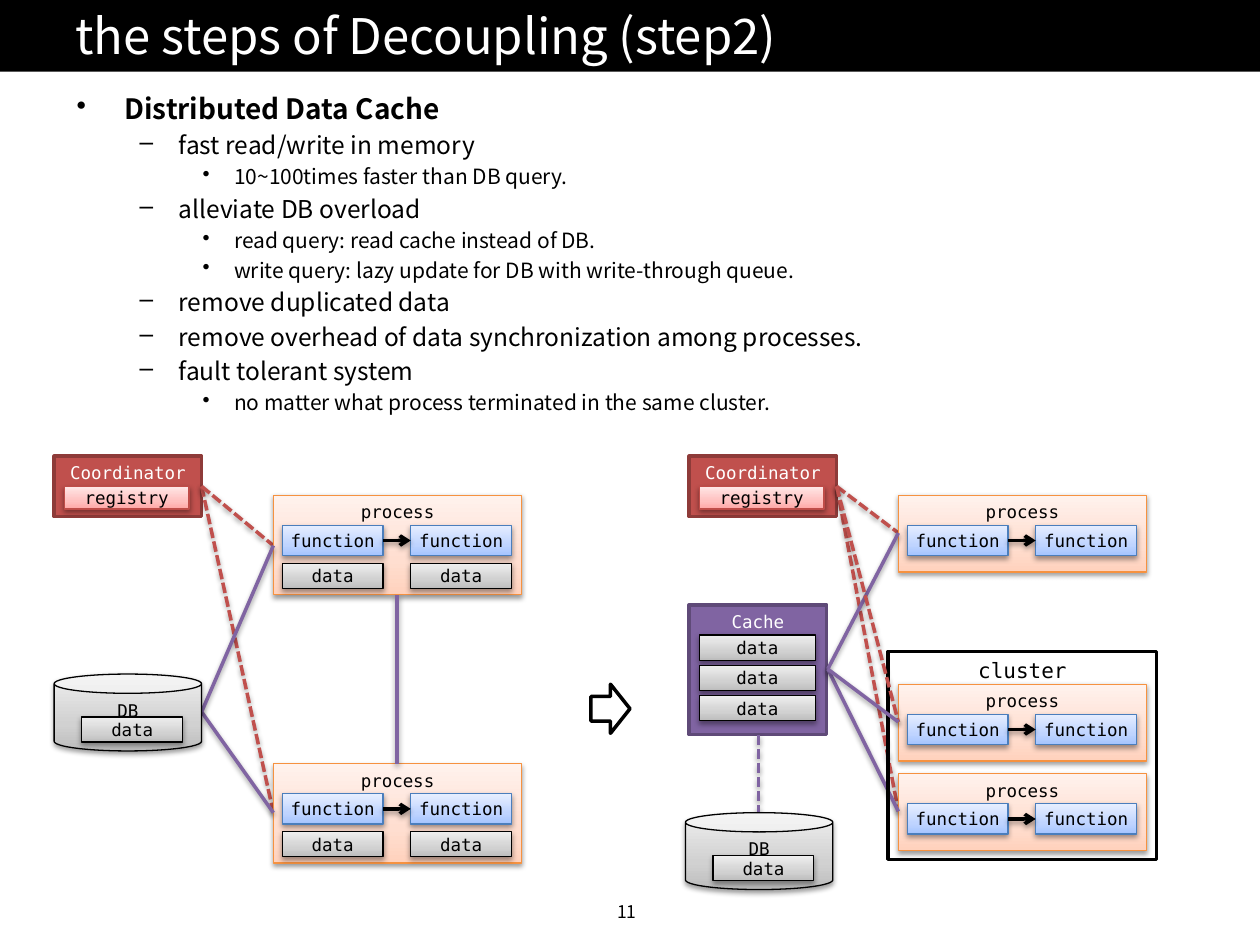
import pptx
import pptx.util
import pptx.dml.color
import pptx.enum.dml
import pptx.enum.shapes
import pptx.enum.text
import pptx.oxml.ns
import lxml.etree
import copy

Inches, Pt = pptx.util.Inches, pptx.util.Pt
SHAPE = pptx.enum.shapes.MSO_SHAPE
ANCHOR = pptx.enum.text.MSO_ANCHOR
ALIGN = pptx.enum.text.PP_ALIGN
qn = pptx.oxml.ns.qn

COLORS = {
    "black": "000000", "white": "FFFFFF",
    "red": "C0504D", "red_edge": "8E3B39", "pink_edge": "BF4C48",
    "purple": "8064A2", "purple_edge": "5F4A78",
    "orange_edge": "F69240", "blue_edge": "4B7EBC",
}
GRADIENTS = {
    "pink": ("FFA6A5", "FFC0BF", "FFE7E7"),
    "orange": ("FFD2BD", "FFDED0", "FFF2ED"),
    "blue": ("A4C4FF", "BFD4FF", "E6EEFF"),
    "gray": ("BDBDBD", "D1D1D1", "EEEEEE"),
}
STOPS = (0, 0.35, 1)


def rgb(name):
    return pptx.dml.color.RGBColor.from_string(COLORS[name])


class Deck:
    sans = "Noto Sans CJK KR"
    mono = "DejaVu Sans Mono"

    def __init__(self, prs):
        self.slide = prs.slides.add_slide(prs.slide_layouts[6])
        self.shapes = self.slide.shapes

    def begin_group(self):
        self.shapes = self.slide.shapes.add_group_shape().shapes

    def end_group(self):
        self.shapes = self.slide.shapes

    def run(self, p, text, size, font, color="black", bold=False):
        r = p.add_run()
        r.text = text
        r.font.size, r.font.name, r.font.bold = Pt(size), font, bold
        r.font.color.rgb = rgb(color)

    def shadow(self, effects):
        shdw = lxml.etree.SubElement(
            effects, qn("a:outerShdw"), blurRad=str(Pt(3.1)), dist=str(Pt(1.6)),
            dir="5400000", rotWithShape="0")
        clr = lxml.etree.SubElement(shdw, qn("a:srgbClr"), val=COLORS["black"])
        lxml.etree.SubElement(clr, qn("a:alpha"), val="38000")

    def gradient(self, fill, spPr, name):
        fill.gradient()
        fill.gradient_angle = 90
        stops = spPr.find(".//" + qn("a:gsLst"))
        stops.append(copy.deepcopy(stops[-1]))
        for stop, pos, color in zip(fill.gradient_stops, STOPS, GRADIENTS[name]):
            stop.position = pos
            stop.color.rgb = pptx.dml.color.RGBColor.from_string(color)

    def box(self, x, y, w, h, text="", fill=None, edge=None, kind=SHAPE.RECTANGLE,
            color="black", size=10, middle=False):
        sp = self.shapes.add_shape(kind, Inches(x), Inches(y), Inches(w), Inches(h))
        sp.shadow.inherit = False
        spPr = sp._element.spPr
        if fill in GRADIENTS:
            self.gradient(sp.fill, spPr, fill)
            self.shadow(spPr.find(qn("a:effectLst")))
        elif fill:
            sp.fill.solid()
            sp.fill.fore_color.rgb = rgb(fill)
        else:
            sp.fill.background()
        if edge:
            sp.line.color.rgb = rgb(edge)
            sp.line.width = Pt(0.75 if fill in GRADIENTS else 2)
        else:
            sp.line.fill.background()
        if text:
            tf = sp.text_frame
            tf.word_wrap = False
            tf.vertical_anchor = ANCHOR.MIDDLE if middle else ANCHOR.TOP
            p = tf.paragraphs[0]
            p.alignment = ALIGN.CENTER
            self.run(p, text, size, self.mono, color)

    def line(self, start, end, color, dashed=False, arrow=False):
        ends = [Inches(v) for v in (*start, *end)]
        cx = self.shapes.add_connector(pptx.enum.shapes.MSO_CONNECTOR.STRAIGHT, *ends)
        cx.line.color.rgb = rgb(color)
        cx.line.width = Pt(2)
        if dashed:
            cx.line.dash_style = pptx.enum.dml.MSO_LINE.SQUARE_DOT
        spPr = cx._element.spPr
        if arrow:
            lxml.etree.SubElement(spPr.find(qn("a:ln")), qn("a:tailEnd"), type="arrow")
        self.shadow(lxml.etree.SubElement(spPr, qn("a:effectLst")))

    def text(self, x, y, w, h, text, size, color="black", wrap=True, anchor=ANCHOR.TOP):
        tf = self.shapes.add_textbox(Inches(x), Inches(y), Inches(w), Inches(h)).text_frame
        tf.word_wrap = wrap
        tf.vertical_anchor = anchor
        self.run(tf.paragraphs[0], text, size, self.sans, color)

    def bullets(self, x, y, w, h, items):
        levels = ((16, 0.38, 0.38, "•"), (14, 0.81, 0.31, "–"), (12, 1.25, 0.25, "•"))
        tf = self.shapes.add_textbox(Inches(x), Inches(y), Inches(w), Inches(h)).text_frame
        tf.word_wrap = True
        for i, (level, text) in enumerate(items):
            size, left, hang, mark = levels[level]
            p = tf.add_paragraph() if i else tf.paragraphs[0]
            p.level = level
            p.space_before = Pt(0.2 * size)
            pPr = p._p.get_or_add_pPr()
            pPr.set("marL", str(Inches(left)))
            pPr.set("indent", str(-Inches(hang)))
            lxml.etree.SubElement(pPr, qn("a:buChar"), char=mark)
            self.run(p, text, size, self.sans, bold=level == 0)

    def data(self, x, y, w=0.8):
        self.box(x, y, w, 0.2, "data", "gray", "black", middle=True)

    def coordinator(self, x, y):
        self.begin_group()
        self.box(x, y, 1.17, 0.48, "Coordinator", "red", "red_edge", color="white")
        self.box(x + 0.08, y + 0.24, 0.99, 0.18, "registry", "pink", "pink_edge", middle=True)
        self.end_group()

    def process(self, x, y, with_data=False):
        columns = (x + 0.07, x + 1.09)
        self.begin_group()
        self.box(x, y, 1.97, 0.79 if with_data else 0.61, "process", "orange", "orange_edge")
        for cx in columns:
            self.box(cx, y + 0.24, 0.8, 0.24, "function", "blue", "blue_edge", middle=True)
        self.line((columns[0] + 0.8, y + 0.36), (columns[1], y + 0.36), "black", arrow=True)
        if with_data:
            for cx in columns:
                self.data(cx, y + 0.54)
        self.end_group()

    def database(self, x, y):
        self.begin_group()
        self.box(x, y, 1.17, 0.61, "DB", "gray", "black", kind=SHAPE.CAN)
        self.data(x + 0.22, y + 0.34)
        self.end_group()

    def cache(self, x, y):
        self.begin_group()
        self.box(x, y, 1.09, 1.03, "Cache", "purple", "purple_edge", color="white")
        for i in range(1, 4):
            self.data(x + 0.08, y + 0.24 * i, 0.92)
        self.end_group()


def main():
    prs = pptx.Presentation()
    prs.slide_width, prs.slide_height = Inches(10), Inches(7.5)
    s = Deck(prs)

    # Title bar, page number and bullet list
    s.box(0, -0.03, 10, 0.6, fill="black")
    s.text(4.8, 7.1, 0.41, 0.27, "11", 10, wrap=False)
    s.bullets(0.51, 0.68, 8.99, 2.76, (
        (0, "Distributed Data Cache"),
        (1, "fast read/write in memory"),
        (2, "10~100times faster than DB query."),
        (1, "alleviate DB overload"),
        (2, "read query: read cache instead of DB."),
        (2, "write query: lazy update for DB with write-through queue."),
        (1, "remove duplicated data"),
        (1, "remove overhead of data synchronization among processes."),
        (1, "fault tolerant system"),
        (2, "no matter what process terminated in the same cluster."),
    ))
    s.text(0.5, -0.03, 9.5, 0.62, "the steps of Decoupling (step2)", 28, "white",
           anchor=ANCHOR.MIDDLE)

    # After: coordinator and cache serve a process and a cluster
    registry, cache = (6.64, 3.86), (6.57, 5.31)
    single, upper, lower = (7.13, 4.23), (7.13, 5.73), (7.13, 6.44)
    s.coordinator(5.47, 3.62)
    for target in (lower, single):
        s.line(registry, target, "red", dashed=True)
    for y in (3.93, 6.14):
        s.process(7.13, y)
    s.box(4.69, 5.43, 0.31, 0.39, fill="white", edge="black", kind=SHAPE.RIGHT_ARROW)
    s.cache(5.47, 4.8)
    for target in (single, lower):
        s.line(cache, target, "purple")

    # Before: every process holds its own data
    registry, db = (1.6, 3.86), (1.6, 5.65)
    targets = ((2.17, 6.45), (2.17, 4.33))
    s.coordinator(0.43, 3.62)
    for target in targets:
        s.line(registry, target, "red", dashed=True)
    for y in (3.93, 6.06):
        s.process(2.17, y, with_data=True)
    for target in targets:
        s.line(db, target, "purple")
    s.line((3.15, 6.06), (3.15, 4.72), "purple")

    # Databases, then the cluster on top
    s.line((6.02, 5.83), (6.02, 6.45), "purple", dashed=True)
    s.database(0.43, 5.35)
    s.database(5.44, 6.45)
    s.box(7.05, 5.17, 2.13, 1.65, "cluster", edge="black", size=12)
    s.process(7.13, 5.43)
    s.line((6.64, 3.86), upper, "red", dashed=True)
    s.line(cache, upper, "purple")

    prs.save("out.pptx")


if __name__ == "__main__":
    main()
